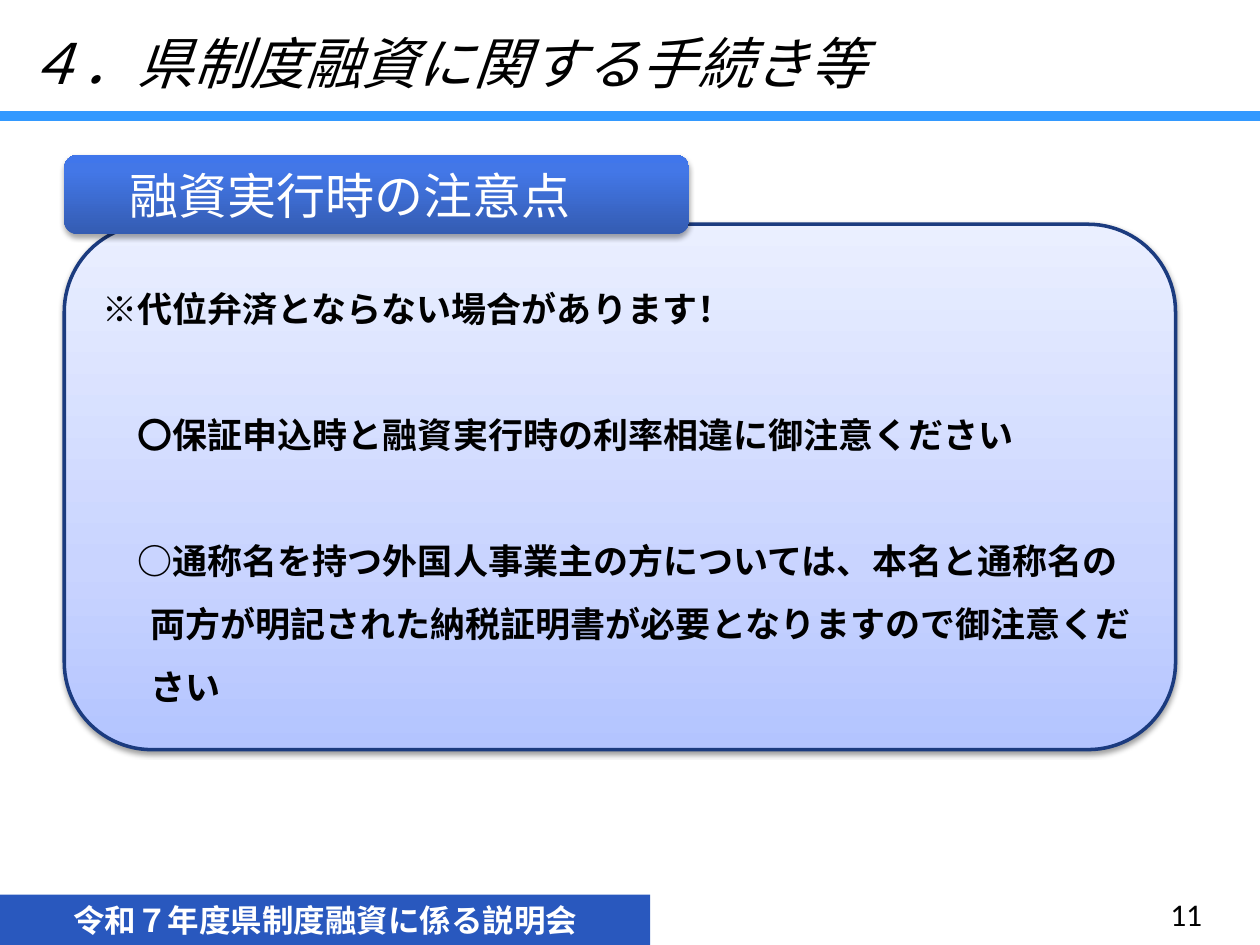
import dataclasses

import lxml.etree
import pptx
import pptx.dml.color
import pptx.enum.shapes
import pptx.enum.text
import pptx.oxml
import pptx.oxml.ns
import pptx.util

Inches, Pt = pptx.util.Inches, pptx.util.Pt
SHAPE = pptx.enum.shapes.MSO_SHAPE
ANCHOR = pptx.enum.text.MSO_ANCHOR
ALIGN = pptx.enum.text.PP_ALIGN
qn = pptx.oxml.ns.qn


@dataclasses.dataclass(frozen=True)
class Theme:
    japanese: str = "Noto Sans CJK JP"
    latin: str = "Arial"
    number: str = "Calibri"
    ink: str = "000000"
    white: str = "FFFFFF"
    rule: str = "3399FF"
    footer: str = "2958BE"
    outline: str = "1B3B7F"
    panel: tuple = ((0, "B3C4FF"), (35, "C9D4FF"), (100, "EAEFFF"))
    heading: tuple = ((0, "345CB2"), (80, "4377E7"), (100, "4076EB"))
    title_size: int = 32
    heading_size: int = 28
    body_size: int = 20
    small_size: int = 18
    line_pitch: int = 36


THEME = Theme()
WIDTH, HEIGHT = 10, 7.5


def rgb(code):
    return pptx.dml.color.RGBColor.from_string(code)


def place(box):
    return [Inches(length) for length in box]


def style(font, size, color, latin=THEME.japanese, bold=None, italic=None):
    font.size, font.bold, font.italic = Pt(size), bold, italic
    font.color.rgb = rgb(color)
    font.name = latin
    # East Asian typeface follows the latin one
    latin_tag = font._element.find(qn("a:latin"))
    east_asian = lxml.etree.Element(qn("a:ea"), typeface=THEME.japanese)
    latin_tag.addnext(east_asian)


def indent(paragraph, left, first):
    properties = paragraph._p.get_or_add_pPr()
    properties.set("marL", str(Inches(left)))
    properties.set("indent", str(Inches(first)))


def gradient(shape, stops):
    """Fill from the bottom edge up to the top edge."""
    shape.fill.gradient()
    fill = shape._element.spPr.find(qn("a:gradFill"))
    stop_list = fill.find(qn("a:gsLst"))
    for old in list(stop_list):
        stop_list.remove(old)
    for share, color in stops:
        stop = lxml.etree.SubElement(stop_list, qn("a:gs"), pos=str(share * 1000))
        lxml.etree.SubElement(stop, qn("a:srgbClr"), val=color)
    fill.find(qn("a:lin")).set("ang", "16200000")


def drop_shadow(shape, opacity, distance):
    shape.shadow.inherit = False
    effects = shape._element.spPr.find(qn("a:effectLst"))
    shadow = lxml.etree.SubElement(
        effects, qn("a:outerShdw"), blurRad=str(Pt(3.1)), dist=str(Pt(distance)),
        dir="5400000", rotWithShape="0")
    color = lxml.etree.SubElement(shadow, qn("a:srgbClr"), val=THEME.ink)
    lxml.etree.SubElement(color, qn("a:alpha"), val=str(opacity * 1000))


def add_rule(slide, box):
    left, top, width, _ = place(box)
    rule = slide.shapes.add_connector(
        pptx.enum.shapes.MSO_CONNECTOR.STRAIGHT, left, top, left + width, top)
    rule.line.color.rgb = rgb(THEME.rule)
    rule.line.width = Pt(6)
    lxml.etree.SubElement(rule._element.spPr, qn("a:effectLst"))


def add_footer(slide, box):
    footer = slide.shapes.add_shape(SHAPE.RECTANGLE, *place(box))
    footer.shadow.inherit = False
    footer.fill.solid()
    footer.fill.fore_color.rgb = rgb(THEME.footer)
    footer.line.fill.background()
    footer.text_frame.vertical_anchor = ANCHOR.MIDDLE
    caption = footer.text_frame.paragraphs[0]
    caption.text = "令和７年度県制度融資に係る説明会"
    caption.alignment = ALIGN.CENTER
    style(caption.font, THEME.small_size, THEME.white, bold=True)


def add_panel(slide, box):
    panel = slide.shapes.add_shape(SHAPE.ROUNDED_RECTANGLE, *place(box))
    gradient(panel, THEME.panel)
    panel.line.color.rgb = rgb(THEME.outline)
    panel.line.width = Pt(2)
    drop_shadow(panel, 38, 1.6)
    frame = panel.text_frame
    frame.word_wrap = True
    frame.vertical_anchor = ANCHOR.MIDDLE
    # Each note: first-line indent, then (text, bold) runs
    notes = (
        (-0.38, [("※代位弁済とならない場合があります！", True)]),
        (-0.1, [("〇保証申込時と融資実行時の利率相違に御注意ください", True)]),
        (-0.1, [("○通称名を持つ外国人事業主の方については、本名と通称名の"
                 "両方が明記された納税証明書が必要となりますので御注意ください", True)]),
    )
    for row, (first, runs) in enumerate(notes):
        note = frame.add_paragraph() if row else frame.paragraphs[0]
        indent(note, 0.38, first)
        note.alignment = ALIGN.LEFT
        note.line_spacing = Pt(THEME.line_pitch)
        note.space_before = Pt(THEME.line_pitch if row else 0)
        for text, bold in runs:
            note.add_run().text = text
        style(note.font, THEME.body_size, THEME.ink, bold=bold)


def add_title(slide, box):
    frame = slide.shapes.add_textbox(*place(box)).text_frame
    frame.word_wrap = True
    frame.margin_left = Inches(0.2)
    title = frame.paragraphs[0]
    for text, latin in (("４．", THEME.japanese),
                        ("県制度融資に関する手続き等", THEME.latin)):
        part = title.add_run()
        part.text = text
        style(part.font, THEME.title_size, THEME.ink, latin, italic=True)


def add_page_number(slide, box):
    frame = slide.shapes.add_textbox(*place(box)).text_frame
    frame.word_wrap = True
    frame.vertical_anchor = ANCHOR.MIDDLE
    number = frame.paragraphs[0]
    number.text = "11"
    number.alignment = ALIGN.RIGHT
    style(number.font, THEME.small_size, THEME.ink, THEME.number)


def add_heading(slide, box):
    tab = slide.shapes.add_shape(SHAPE.ROUNDED_RECTANGLE, *place(box))
    gradient(tab, THEME.heading)
    tab.line.fill.background()
    drop_shadow(tab, 35, 1.8)
    tab.text_frame.vertical_anchor = ANCHOR.MIDDLE
    heading = tab.text_frame.paragraphs[0]
    heading.text = "融資実行時の注意点"
    heading.alignment = ALIGN.LEFT
    indent(heading, 0.39, 0)
    style(heading.font, THEME.heading_size, THEME.white, THEME.number)


def main():
    deck = pptx.Presentation()
    deck.slide_width, deck.slide_height = Inches(WIDTH), Inches(HEIGHT)
    slide = deck.slides.add_slide(deck.slide_layouts[6])
    margin = 0.051 * WIDTH
    # Frame of the slide
    add_rule(slide, (0, 0.92, WIDTH, 0))
    add_footer(slide, (0, HEIGHT - 0.4, 0.516 * WIDTH, 0.4))
    # Content, with the heading overlapping the panel
    add_panel(slide, (margin, 1.78, 0.882 * WIDTH, 4.17))
    add_title(slide, (0, 0.18, 0.815 * WIDTH, 1.18))
    add_page_number(slide, (0.731 * WIDTH, 7.05, 0.233 * WIDTH, 0.4))
    add_heading(slide, (margin, 1.23, 0.496 * WIDTH, 0.63))
    deck.save("out.pptx")


if __name__ == "__main__":
    main()
